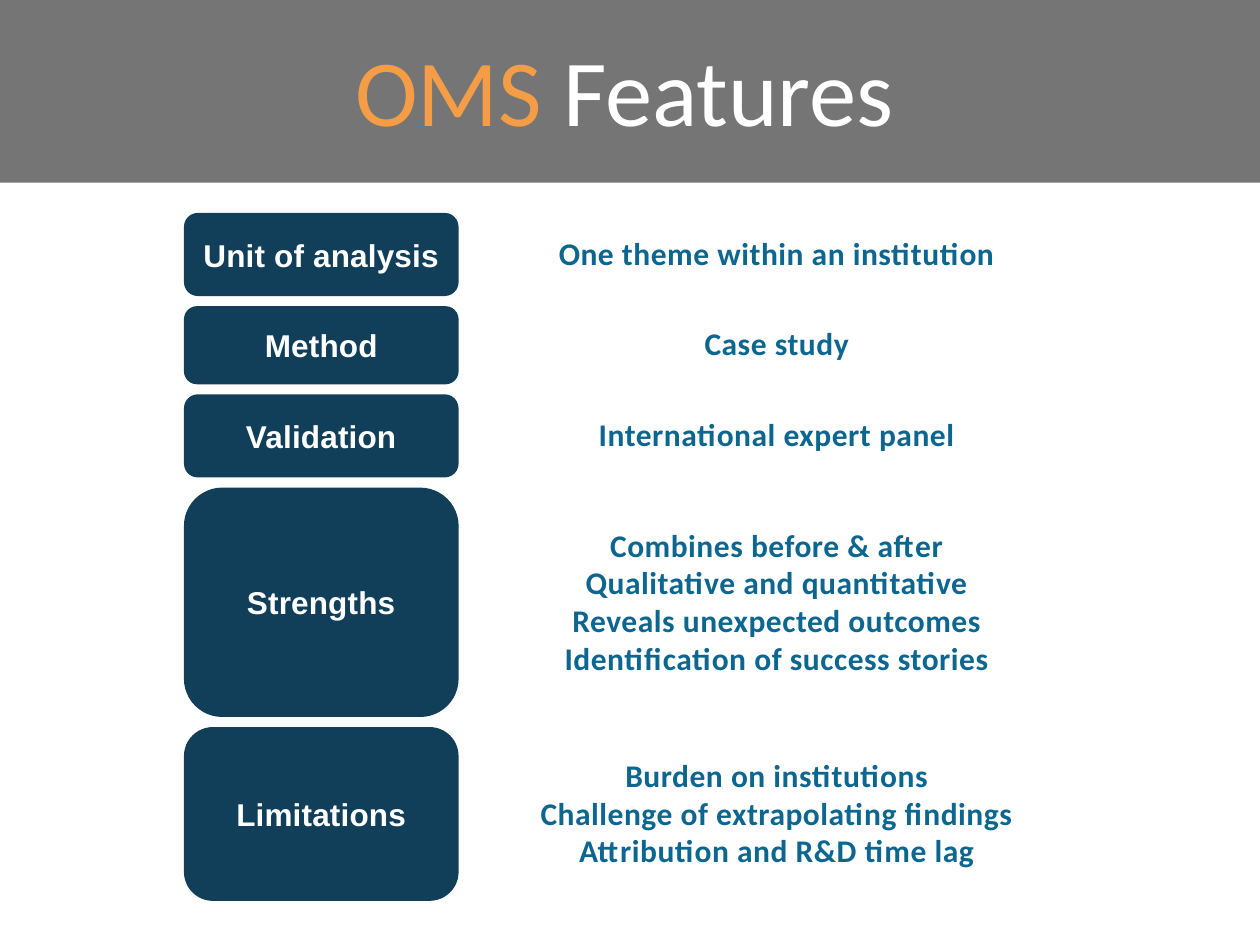
import pptx
import pptx.util
import pptx.dml.color
import pptx.enum.shapes
import pptx.enum.text
import pptx.oxml
import pptx.oxml.ns

WIDE, HIGH = 10, 7.5
TOP, GAP = 1.69, 0.08
LABEL_X, LABEL_W = 1.46, 2.18
BODY_X, BODY_W = 3.86, 4.61
LINE, PAD, LIFT = 0.305, 0.05, 0.02
NAVY, TEAL, WHITE, GRAY, GOLD = "113E59", "0D668F", "FFFFFF", "666666", "F49D46"

ROWS = [
    (0.66, "Unit of analysis", ["One theme within an institution"]),
    (0.62, "Method", ["Case study"]),
    (0.66, "Validation", ["International expert panel"]),
    (1.82, "Strengths", ["Combines before & after", "Qualitative and quantitative",
                         "Reveals unexpected outcomes", "Identification of success stories"]),
    (1.38, "Limitations", ["Burden on institutions", "Challenge of extrapolating findings",
                           "Attribution and R&D time lag"]),
]


def color(code):
    """Turn a hex string into a colour."""
    return pptx.dml.color.RGBColor.from_string(code)


def place(item, left, top, wide, high):
    """Set place and size in inches."""
    item.left, item.top, item.width, item.height = map(
        pptx.util.Inches, (left, top, wide, high))


def paint(item, code, alpha=None):
    """Fill a shape, with optional opacity in percent."""
    item.fill.solid()
    item.fill.fore_color.rgb = color(code)
    if alpha is not None:
        tint = item.fill._xPr.find(".//" + pptx.oxml.ns.qn("a:srgbClr"))
        node = pptx.oxml.parse_xml(
            f'<a:alpha {pptx.oxml.ns.nsdecls("a")} val="{alpha * 1000}"/>')
        tint.append(node)


def frame(item, anchor, side=0.1, top=PAD):
    """Prepare the text frame of a shape."""
    text = item.text_frame
    text.word_wrap = True
    text.auto_size = pptx.enum.text.MSO_AUTO_SIZE.NONE
    text.vertical_anchor = anchor
    text.margin_left = text.margin_right = pptx.util.Inches(side)
    text.margin_top = pptx.util.Inches(top)
    text.margin_bottom = pptx.util.Inches(PAD)
    return text


def write(para, text, font, size, code, bold=False, track=0):
    """Add one run to a centred paragraph."""
    para.alignment = pptx.enum.text.PP_ALIGN.CENTER
    run = para.add_run()
    run.text = text
    run.font.name = font
    run.font.size = pptx.util.Pt(size)
    run.font.bold = bold
    run.font.color.rgb = color(code)
    if track:
        run._r.get_or_add_rPr().set("spc", str(track))


def banner(slide):
    """Format the title as a band across the top."""
    title = slide.shapes.title
    place(title, -0.12, -0.15, 10.15, 1.6)
    paint(title, GRAY, 90)
    text = frame(title, pptx.enum.text.MSO_ANCHOR.MIDDLE, top=0.15)
    para = text.paragraphs[0]
    write(para, "OMS ", "Calibri", 54, GOLD)
    write(para, "Features", "Calibri", 54, WHITE)


def label(slide, top, high, text):
    """Add a rounded label in the left column."""
    kind = pptx.enum.shapes.MSO_SHAPE.ROUNDED_RECTANGLE
    card = slide.shapes.add_shape(kind, 0, 0, 0, 0)
    place(card, LABEL_X, top, LABEL_W, high)
    paint(card, NAVY)
    card.line.fill.background()
    card.shadow.inherit = False
    area = frame(card, pptx.enum.text.MSO_ANCHOR.MIDDLE, side=0)
    write(area.paragraphs[0], text, "Arial", 18, WHITE, True, 10)


def body(slide, mid, lines):
    """Add the lines of the right column about a middle height."""
    high = LINE * len(lines) + 2 * PAD
    box = slide.shapes.add_textbox(0, 0, 0, 0)
    place(box, BODY_X, mid - high / 2, BODY_W, high)
    area = frame(box, pptx.enum.text.MSO_ANCHOR.BOTTOM)
    area.auto_size = pptx.enum.text.MSO_AUTO_SIZE.SHAPE_TO_FIT_TEXT
    for rank, line in enumerate(lines):
        para = area.add_paragraph() if rank else area.paragraphs[0]
        write(para, line, "Calibri", 18, TEAL, True, 30)


def main():
    """Build and save the slide."""
    deck = pptx.Presentation()
    deck.slide_width = pptx.util.Inches(WIDE)
    deck.slide_height = pptx.util.Inches(HIGH)
    slide = deck.slides.add_slide(deck.slide_layouts[5])
    banner(slide)
    top = TOP
    for high, name, lines in ROWS:
        label(slide, top, high, name)
        body(slide, top + high / 2 - LIFT, lines)
        top += high + GAP
    deck.save("out.pptx")


if __name__ == "__main__":
    main()
